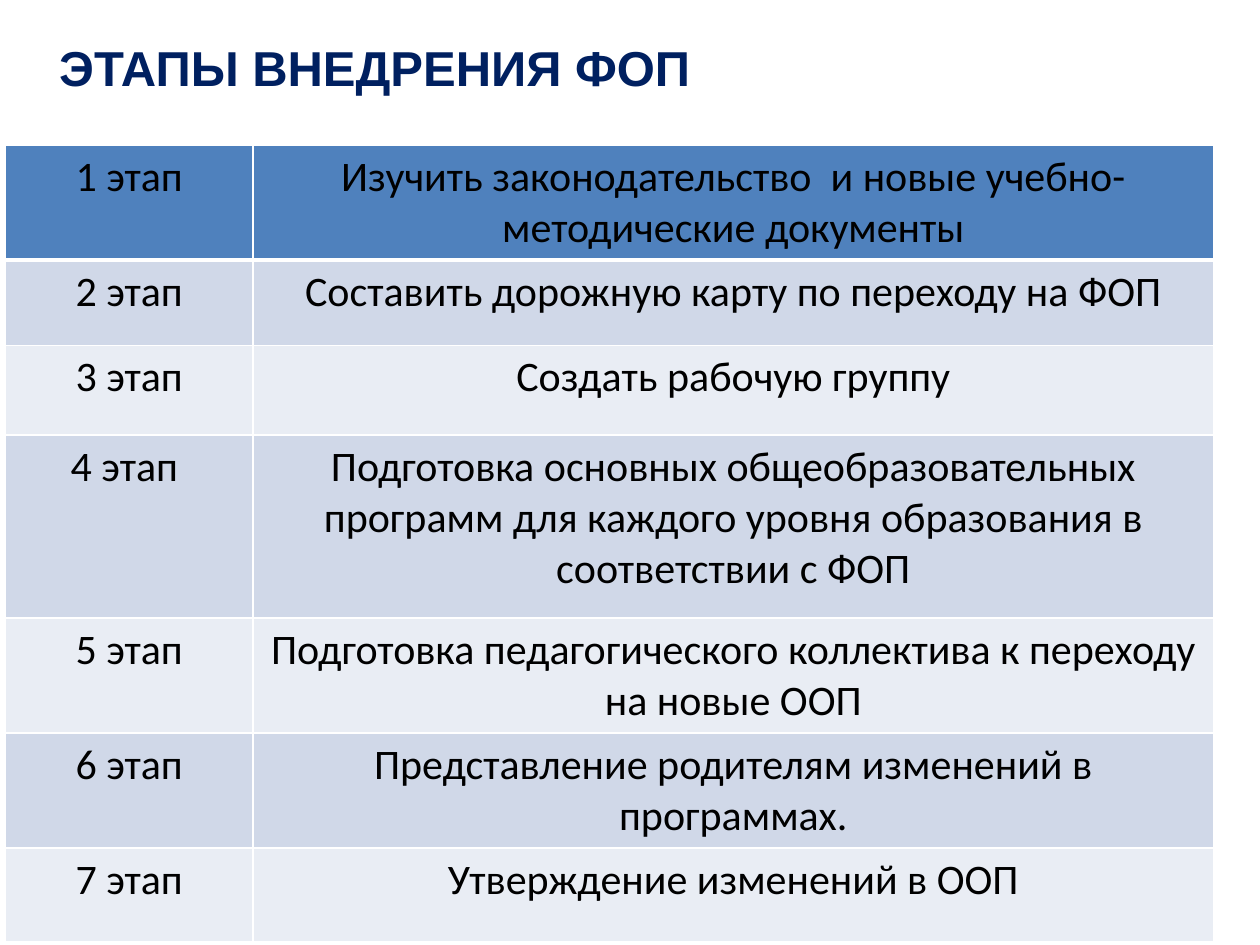
import pptx
import pptx.util
import pptx.dml.color
import pptx.enum.text
import pptx.oxml
import pptx.oxml.ns
from pptx.util import Inches

STAGES = [
    ("1 этап", "Изучить законодательство  и новые учебно-методические документы"),
    ("2 этап", "Составить дорожную карту по переходу на ФОП"),
    ("3 этап", "Создать рабочую группу"),
    ("4 этап ", "Подготовка основных общеобразовательных программ "
                "для каждого уровня образования в соответствии с ФОП"),
    ("5 этап", "Подготовка педагогического коллектива к переходу на новые ООП"),
    ("6 этап", "Представление родителям изменений в программах."),
    ("7 этап", "Утверждение изменений в ООП"),
]
COLUMN_WIDTHS = [1.97, 7.62]
ROW_HEIGHTS = [0.74, 0.68, 0.71, 1.45, 0.74, 0.74, 0.74]
HEADER_FILL = "4F81BD"
BAND_FILLS = ["E9EDF4", "D0D8E8"]


def color(hex_value):
    return pptx.dml.color.RGBColor.from_string(hex_value)


def format_text(text_frame, alignment, font_name, size, hex_value, bold=False):
    for paragraph in text_frame.paragraphs:
        paragraph.alignment = alignment
        for run in paragraph.runs:
            run.font.name = font_name
            run.font.size = pptx.util.Pt(size)
            run.font.bold = bold
            run.font.color.rgb = color(hex_value)


def set_borders(cell, hex_value, widths):
    """Add border lines; widths maps a side (L, R, T, B) to points."""
    properties = cell._tc.get_or_add_tcPr()
    for position, side in enumerate("LRTB"):
        line = pptx.oxml.parse_xml(
            f'<a:ln{side} {pptx.oxml.ns.nsdecls("a")} w="{pptx.util.Pt(widths[side])}">'
            f'<a:solidFill><a:srgbClr val="{hex_value}"/></a:solidFill></a:ln{side}>'
        )
        properties.insert(position, line)


def place_title(slide, left, top, width, height):
    title = slide.shapes.title
    title.left, title.top, title.width, title.height = left, top, width, height
    text_frame = title.text_frame
    text_frame.text = "ЭТАПЫ ВНЕДРЕНИЯ ФОП"
    text_frame.word_wrap = True
    text_frame.auto_size = pptx.enum.text.MSO_AUTO_SIZE.NONE
    text_frame.vertical_anchor = pptx.enum.text.MSO_ANCHOR.TOP
    format_text(text_frame, pptx.enum.text.PP_ALIGN.LEFT, "Arial", 28, "002060", bold=True)


def place_stage_table(slide, left, top, width, height):
    table = slide.shapes.add_table(
        len(STAGES), len(COLUMN_WIDTHS), left, top, width, height
    ).table
    for column, share in zip(table.columns, COLUMN_WIDTHS):
        column.width = int(width * share / sum(COLUMN_WIDTHS))
    for row, row_height in zip(table.rows, ROW_HEIGHTS):
        row.height = Inches(row_height)

    for row_index, stage in enumerate(STAGES):
        fill = BAND_FILLS[row_index % 2] if row_index else HEADER_FILL
        # A thick rule separates the header row from the rest
        widths = {
            "L": 1,
            "R": 1,
            "T": 3 if row_index == 1 else 1,
            "B": 3 if row_index == 0 else 1,
        }
        for column_index, text in enumerate(stage):
            cell = table.cell(row_index, column_index)
            cell.text_frame.text = text
            format_text(cell.text_frame, pptx.enum.text.PP_ALIGN.CENTER,
                        "Calibri", 24, "000000")
            cell.fill.solid()
            cell.fill.fore_color.rgb = color(fill)
            set_borders(cell, "FFFFFF", widths)


def main():
    presentation = pptx.Presentation()
    presentation.slide_width, presentation.slide_height = Inches(10), Inches(7.5)
    slide = presentation.slides.add_slide(presentation.slide_layouts[5])
    slide.background.fill.solid()
    slide.background.fill.fore_color.rgb = color("FFFFFF")

    # Heading
    place_title(slide, Inches(0.37), Inches(0.25), Inches(9.25), Inches(0.57))
    # Stages of the rollout
    place_stage_table(slide, Inches(0.04), Inches(1.15), Inches(9.59), Inches(6.28))
    presentation.save("out.pptx")


if __name__ == "__main__":
    main()
